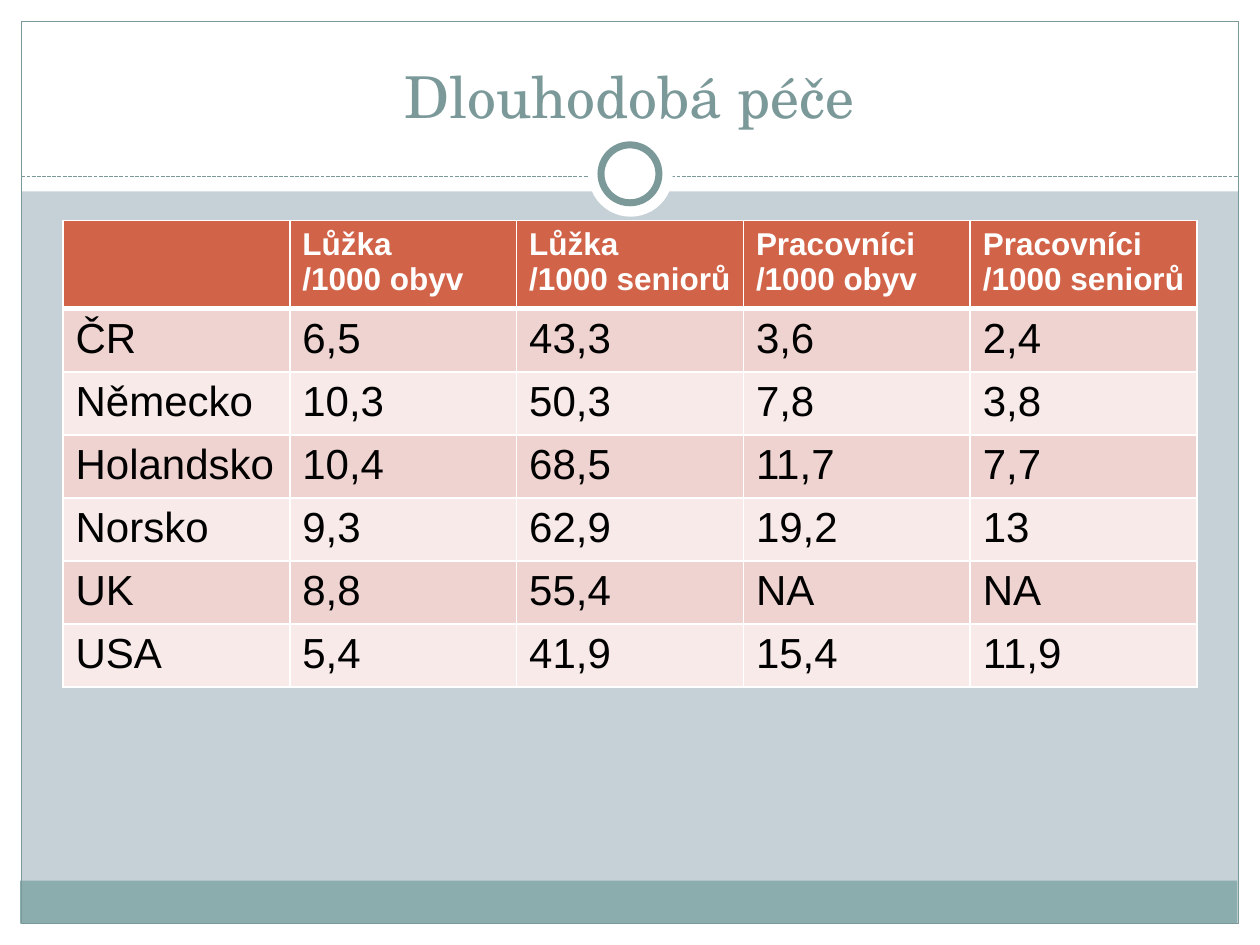
from pptx import Presentation
from pptx.dml.color import RGBColor
from pptx.enum.dml import MSO_LINE
from pptx.enum.shapes import MSO_CONNECTOR, MSO_SHAPE
from pptx.enum.text import MSO_ANCHOR, PP_ALIGN
from pptx.util import Inches, Pt
from lxml.etree import SubElement
from pptx.oxml.ns import qn

TITLE = "Dlouhodobá péče"
HEAD = ["", "Lůžka\n/1000 obyv", "Lůžka\n/1000 seniorů",
        "Pracovníci\n/1000 obyv", "Pracovníci\n/1000 seniorů"]
ROWS = [
    ["ČR", "6,5", "43,3", "3,6", "2,4"],
    ["Německo", "10,3", "50,3", "7,8", "3,8"],
    ["Holandsko", "10,4", "68,5", "11,7", "7,7"],
    ["Norsko", "9,3", "62,9", "19,2", "13"],
    ["UK", "8,8", "55,4", "NA", "NA"],
    ["USA", "5,4", "41,9", "15,4", "11,9"],
]
THEME = {
    "back": "C5D1D7", "white": "FFFFFF", "band": "8CADAE", "line": "7C999A",
    "head": "D16349", "odd": "EED3D0", "even": "F7EAE9",
    "title": {"name": "TeX Gyre Schola", "size": Pt(33), "bold": False, "color": "7C999A"},
    "label": {"name": "Arial", "size": Pt(18), "bold": True, "color": "FFFFFF"},
    "body": {"name": "Arial", "size": Pt(24), "bold": False, "color": "000000"},
}
RECT, OVAL = MSO_SHAPE.RECTANGLE, MSO_SHAPE.OVAL
SHAPES = [
    (RECT, (0, 7.33, 10, 0.17), "white", 0),
    (RECT, (0, 0, 10, 1.52), "white", 0),
    (RECT, (0, 0, 0.17, 7.5), "white", 0),
    (RECT, (9.83, 0, 0.17, 7.5), "white", 0),
    (RECT, (0.16, 6.99, 9.66, 0.34), "band", 0),
    (RECT, (0.17, 0.17, 9.66, 7.16), None, 0.75),
    ("rule", (0.17, 1.4, 9.83, 1.4), "line", 0.75),
    (OVAL, (4.67, 1.05, 0.67, 0.67), "white", 0),
    (OVAL, (4.77, 1.15, 0.46, 0.46), "white", 4),
]


def paint(fill, key):
    fill.solid()
    fill.fore_color.rgb = RGBColor.from_string(THEME[key])


def write(frame, text, style):
    frame.text = text
    for para in frame.paragraphs:
        for key, val in THEME[style].items():
            if key == "color":
                para.font.color.rgb = RGBColor.from_string(val)
            else:
                setattr(para.font, key, val)


def stroke(line, width):
    paint(line.fill, "line")
    line.width = Pt(width)


def draw(slide, kind, box, fill, width):
    box = [Inches(v) for v in box]
    if kind == "rule":
        rule = slide.shapes.add_connector(MSO_CONNECTOR.STRAIGHT, *box)
        SubElement(rule._element.spPr, qn("a:effectLst"))
        stroke(rule.line, width)
        rule.line.dash_style = MSO_LINE.SQUARE_DOT
        return
    shape = slide.shapes.add_shape(kind, *box)
    shape.shadow.inherit = False
    if fill:
        paint(shape.fill, fill)
    else:
        shape.fill.background()
    if width:
        stroke(shape.line, width)
    else:
        shape.line.fill.background()


def edge(cell, low):
    props = cell._tc.get_or_add_tcPr()
    for side, width in zip("LRTB", (1, 1, 1, low)):
        line = SubElement(props, qn("a:ln" + side), w=str(Pt(width)))
        fill = SubElement(line, qn("a:solidFill"))
        SubElement(fill, qn("a:srgbClr"), val=THEME["white"])


def grid(slide):
    data = [HEAD] + ROWS
    tall = [0.65] + [0.47] * len(ROWS)
    table = slide.shapes.add_table(
        len(data), len(HEAD), Inches(0.5), Inches(1.75),
        Inches(9), Inches(sum(tall))).table
    for r, texts in enumerate(data):
        table.rows[r].height = Inches(tall[r])
        tint = "head" if r == 0 else ("even", "odd")[r % 2]
        for c, text in enumerate(texts):
            cell = table.cell(r, c)
            write(cell.text_frame, text, "body" if r else "label")
            edge(cell, 1 if r else 3)
            paint(cell.fill, tint)


def main():
    deck = Presentation()
    deck.slide_width, deck.slide_height = Inches(10), Inches(7.5)
    slide = deck.slides.add_slide(deck.slide_layouts[6])
    paint(slide.background.fill, "back")
    for item in SHAPES:
        draw(slide, *item)
    box = [Inches(v) for v in (0.33, 0.25, 9.33, 0.83)]
    frame = slide.shapes.add_textbox(*box).text_frame
    for key, val in {"word_wrap": True, "vertical_anchor": MSO_ANCHOR.BOTTOM}.items():
        setattr(frame, key, val)
    write(frame, TITLE, "title")
    frame.paragraphs[0].alignment = PP_ALIGN.CENTER
    grid(slide)
    deck.save("out.pptx")


if __name__ == "__main__":
    main()
